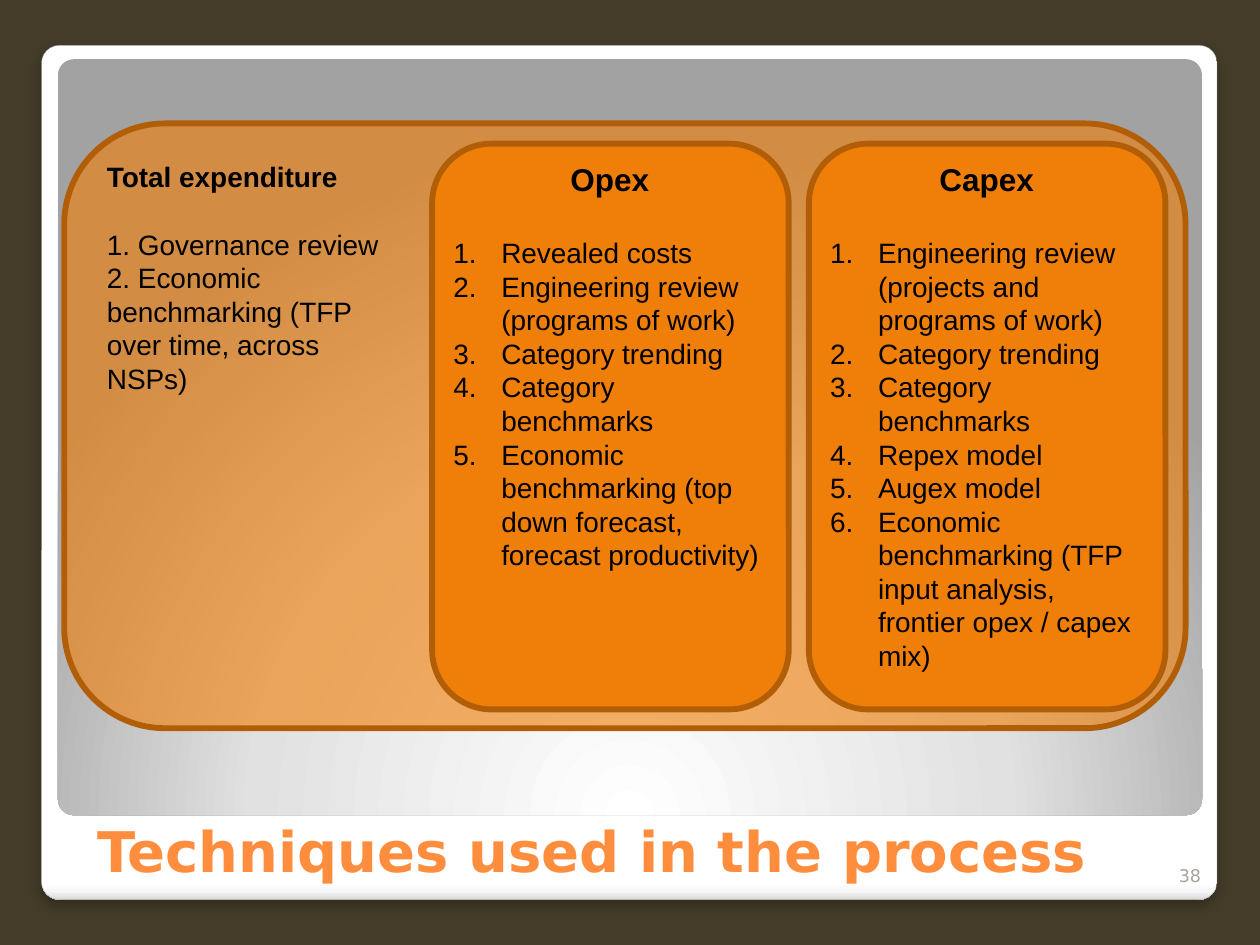
from lxml import etree
from pptx import Presentation
from pptx.dml.color import RGBColor
from pptx.enum.shapes import MSO_SHAPE as SHAPE
from pptx.enum.text import MSO_ANCHOR as ANCHOR, PP_ALIGN as ALIGN
from pptx.oxml import parse_xml
from pptx.oxml.ns import nsdecls, qn
from pptx.util import Inches, Pt

TITLE = "Techniques used in the process"
NUMBER = "38"
TOTAL = ("Total expenditure", [
    "1. Governance review",
    "2. Economic benchmarking (TFP over time, across NSPs)",
])
CARDS = [
    ("Opex", [
        "Revealed costs",
        "Engineering review (programs of work)",
        "Category trending",
        "Category benchmarks",
        "Economic benchmarking (top down forecast, forecast productivity)",
    ]),
    ("Capex", [
        "Engineering review (projects and programs of work)",
        "Category trending",
        "Category benchmarks",
        "Repex model",
        "Augex model",
        "Economic benchmarking (TFP input analysis, frontier opex / capex mix)",
    ]),
]
COLORS = {
    "back": "443C29", "orange": "F07F09", "edge": "B25E07", "title": "FF8D3E",
    "text": "000000", "number": "A8A49B", "frame": "A4A4A4",
}
FRAME_STOPS = [(0, "FFFFFF"), (98, "FFFFFF"), (99, "F7F7F7"), (100, "DADADA")]
PANEL_STOPS = [(0, "FFFFFF"), (55, "E1E1E1"), (100, "A2A2A2")]
LINEAR = '<a:lin ang="5400000" scaled="0"/>'
RADIAL = ('<a:path path="circle"><a:fillToRect l="50000" t="175000" '
          'r="50000" b="-75000"/></a:path>')
SHADOW = ('<a:outerShdw blurRad="76200" dist="50800" dir="5400000" algn="tl" '
          'rotWithShape="0"><a:srgbClr val="000000"><a:alpha val="25000"/>'
          '</a:srgbClr></a:outerShdw>')
CARD_LEFT, CARD_STEP = 3.43, 2.99


def rgb(name):
    return RGBColor.from_string(COLORS[name])


def add_box(s, at, fill=None, line=None, width=3.35, adj=None):
    sp = s.shapes.add_shape(SHAPE.ROUNDED_RECTANGLE, *map(Inches, at))
    sp.shadow.inherit = False
    if adj:
        sp.adjustments[0] = adj
    if fill:
        sp.fill.solid()
        sp.fill.fore_color.rgb = rgb(fill)
    if line:
        sp.line.color.rgb = rgb(line)
        sp.line.width = Pt(width)
    else:
        sp.line.fill.background()
    return sp


def set_gradient(sp, stops, direction):
    gs = "".join(f'<a:gs pos="{pos * 1000}"><a:srgbClr val="{c}"/></a:gs>' for pos, c in stops)
    grad = parse_xml(f'<a:gradFill {nsdecls("a")} rotWithShape="1">'
                     f'<a:gsLst>{gs}</a:gsLst>{direction}</a:gradFill>')
    sp.element.spPr.find(qn("a:prstGeom")).addnext(grad)


def format_text(p, text, size, color="text", font="Arial", bold=False, align=ALIGN.LEFT):
    p.text = text
    p.alignment = align
    p.font.name, p.font.size, p.font.bold = font, Pt(size), bold
    p.font.color.rgb = rgb(color)


def add_text(s, at):
    tf = s.shapes.add_textbox(*map(Inches, at)).text_frame
    tf.word_wrap = True
    return tf


def number_paragraph(p):
    pPr = p._p.get_or_add_pPr()
    pPr.set("marL", str(Inches(0.38)))
    pPr.set("indent", str(Inches(-0.38)))
    bullet = parse_xml(f'<a:buAutoNum {nsdecls("a")} type="arabicPeriod"/>')
    pPr.find(qn("a:defRPr")).addprevious(bullet)


def add_list(s, at, heading, items, size, gap, align=ALIGN.LEFT, numbered=False):
    tf = add_text(s, at)
    p = tf.paragraphs[0]
    format_text(p, heading, size, bold=True, align=align)
    p.space_after = Pt(gap)
    for item in items:
        p = tf.add_paragraph()
        format_text(p, item, 16)
        if numbered:
            number_paragraph(p)


def main():
    prs = Presentation()
    prs.slide_width, prs.slide_height = Inches(10), Inches(7.5)
    s = prs.slides.add_slide(prs.slide_layouts[5])
    s.background.fill.solid()
    s.background.fill.fore_color.rgb = rgb("back")

    frame = add_box(s, (0.33, 0.36, 9.33, 6.78), line="frame", width=0.16, adj=0.021)
    set_gradient(frame, FRAME_STOPS, LINEAR)
    frame.element.spPr.find(qn("a:effectLst")).append(parse_xml(
        SHADOW.replace("<a:outerShdw", f'<a:outerShdw {nsdecls("a")}', 1)))
    panel = add_box(s, (0.46, 0.47, 9.08, 6), adj=0.021)
    set_gradient(panel, PANEL_STOPS, RADIAL)
    total = add_box(s, (0.51, 0.98, 8.9, 4.8), "orange", "edge")
    color = total.element.spPr.find(qn("a:solidFill"))[0]
    etree.SubElement(color, qn("a:alpha")).set("val", "62000")

    title = s.shapes.title
    title.left, title.top, title.width, title.height = map(Inches, (0.67, 6.27, 8.95, 0.79))
    title.text_frame.vertical_anchor = ANCHOR.BOTTOM
    format_text(title.text_frame.paragraphs[0], TITLE, 32, "title", "DejaVu Sans", True)
    total.element.addnext(title.element)

    add_list(s, (0.75, 1.22, 2.52, 1.99), *TOTAL, size=16, gap=19.2)
    for i, (heading, items) in enumerate(CARDS):
        left = CARD_LEFT + i * CARD_STEP
        add_box(s, (left, 1.14, 2.83, 4.49), "orange", "edge")
        add_list(s, (left + 0.07, 1.22, 2.68, 4.21), heading, items,
                 size=18, gap=21.6, align=ALIGN.CENTER, numbered=True)

    tf = add_text(s, (9.13, 6.68, 0.5, 0.4))
    tf.vertical_anchor = ANCHOR.BOTTOM
    format_text(tf.paragraphs[0], NUMBER, 10, "number", "DejaVu Sans", align=ALIGN.RIGHT)
    prs.save("out.pptx")


if __name__ == "__main__":
    main()
